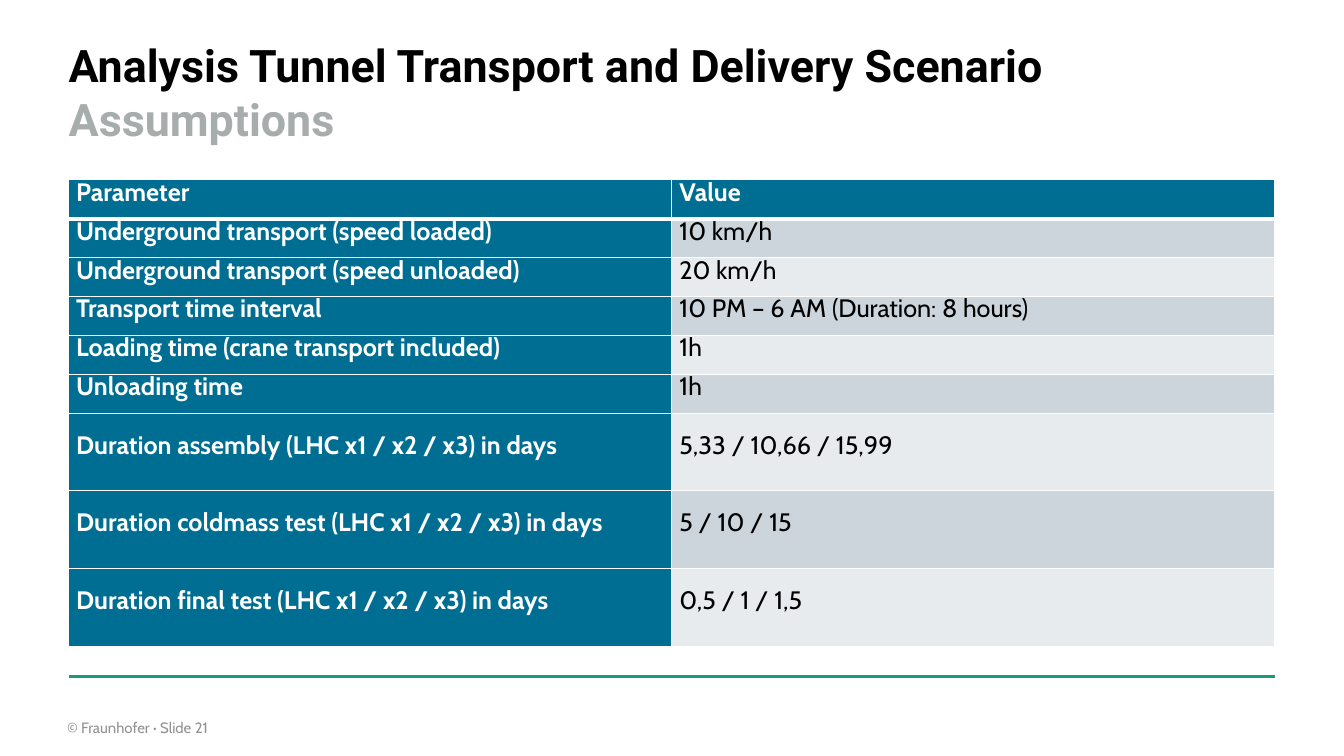
from lxml.etree import SubElement
from pptx import Presentation
from pptx.dml.color import RGBColor
from pptx.enum.shapes import MSO_CONNECTOR
from pptx.enum.text import MSO_ANCHOR
from pptx.oxml.ns import qn
from pptx.util import Cm, Pt

COLORS = {
    "white": "FFFFFF", "black": "000000", "subtitle": "A7ACAC",
    "footer": "929292", "dot": "808080", "rule": "179C7D",
    "blue": "006E92", "band_dark": "CCD5DC", "band_light": "E7EBEE",
}
LEFT, WIDTH = 1.73, 30.4
UNIT_ROW = 0.98

# Parameter, value, height in unit rows
ASSUMPTIONS = [
    ("Parameter", "Value", 1),
    ("Underground transport (speed loaded)", "10 km/h", 1),
    ("Underground transport (speed unloaded)", "20 km/h", 1),
    ("Transport time interval", "10 PM – 6 AM (Duration: 8 hours)", 1),
    ("Loading time (crane transport included)", "1h", 1),
    ("Unloading time", "1h", 1),
    ("Duration assembly (LHC x1 / x2 / x3) in days", "5,33 / 10,66 / 15,99", 2),
    ("Duration coldmass test (LHC x1 / x2 / x3) in days", "5 / 10 / 15", 2),
    ("Duration final test (LHC x1 / x2 / x3) in days", "0,5 / 1 / 1,5", 2),
]


def rgb(name):
    return RGBColor.from_string(COLORS[name])


def style_font(font, name, size, color, bold=False):
    font.name, font.size, font.bold = name, Pt(size), bold
    font.color.rgb = rgb(color)


def add_text(page, left, top, width, height, spans, font, size, bold=False,
             anchor=MSO_ANCHOR.TOP, wrap=True):
    """Add one paragraph of coloured spans; None stands for a line break."""
    box = page.shapes.add_textbox(Cm(left), Cm(top), Cm(width), Cm(height))
    frame = box.text_frame
    frame.word_wrap, frame.vertical_anchor = wrap, anchor
    frame.margin_left = frame.margin_right = 0
    frame.margin_top = frame.margin_bottom = 0
    para = frame.paragraphs[0]
    for part in spans:
        if part is None:
            para.add_line_break()
            continue
        span = para.add_run()
        span.text = part[0]
        style_font(span.font, font, size, part[1], bold)


def add_rule(page, left, top, width):
    rule = page.shapes.add_connector(
        MSO_CONNECTOR.STRAIGHT, Cm(left), Cm(top), Cm(left + width), Cm(top))
    rule.line.color.rgb = rgb("rule")
    rule.line.width = Pt(2.5)
    SubElement(rule._element.spPr, qn("a:effectLst"))


def set_borders(cell, top, bottom):
    properties = cell._tc.get_or_add_tcPr()
    for side, points in (("L", 1), ("R", 1), ("T", top), ("B", bottom)):
        line = SubElement(properties, qn(f"a:ln{side}"), w=str(Pt(points)))
        fill = SubElement(line, qn("a:solidFill"))
        SubElement(fill, qn("a:srgbClr"), val=COLORS["white"])


def fill_cell(cell, text, row, is_heading):
    # Thick line between the header and the body
    set_borders(cell, top=3 if row == 1 else 1, bottom=3 if row == 0 else 1)
    band = "band_dark" if row % 2 else "band_light"
    cell.fill.solid()
    cell.fill.fore_color.rgb = rgb("blue" if is_heading else band)
    cell.vertical_anchor = MSO_ANCHOR.MIDDLE
    cell.margin_left = cell.margin_right = Cm(0.19)
    cell.margin_top = cell.margin_bottom = 0
    cell.text_frame.text = text
    para = cell.text_frame.paragraphs[0]
    para.line_spacing, para.space_after = Pt(12), Pt(6)
    style_font(para.runs[0].font, "Cabin", 18,
               "white" if is_heading else "black", is_heading)


def add_assumptions_table(page, left, top, width):
    total = UNIT_ROW * sum(units for *_, units in ASSUMPTIONS)
    table = page.shapes.add_table(len(ASSUMPTIONS), 2, Cm(left), Cm(top),
                                  Cm(width), Cm(total)).table
    for row, (parameter, value, units) in enumerate(ASSUMPTIONS):
        table.rows[row].height = Cm(UNIT_ROW * units)
        fill_cell(table.cell(row, 0), parameter, row, True)
        fill_cell(table.cell(row, 1), value, row, row == 0)


def main():
    deck = Presentation()
    deck.slide_width, deck.slide_height = Cm(33.87), Cm(19.05)
    page = deck.slides.add_slide(deck.slide_layouts[6])

    # Footer
    footer = [("© Fraunhofer", "footer"), (" · ", "dot"), ("Slide 21", "footer")]
    add_text(page, 1.69, 18.11, 4.52, 0.46, footer, "Cabin", 10.7,
             anchor=MSO_ANCHOR.BOTTOM, wrap=False)
    add_rule(page, LEFT, 17.05, WIDTH)

    # Title
    title = [("Analysis Tunnel Transport and Delivery Scenario", "black"), None,
             ("Assumptions", "subtitle")]
    add_text(page, LEFT, 0.95, WIDTH, 2.74, title, "Roboto", 32, bold=True)

    # Assumptions
    add_assumptions_table(page, LEFT, 4.53, WIDTH)

    deck.save("out.pptx")


if __name__ == "__main__":
    main()
